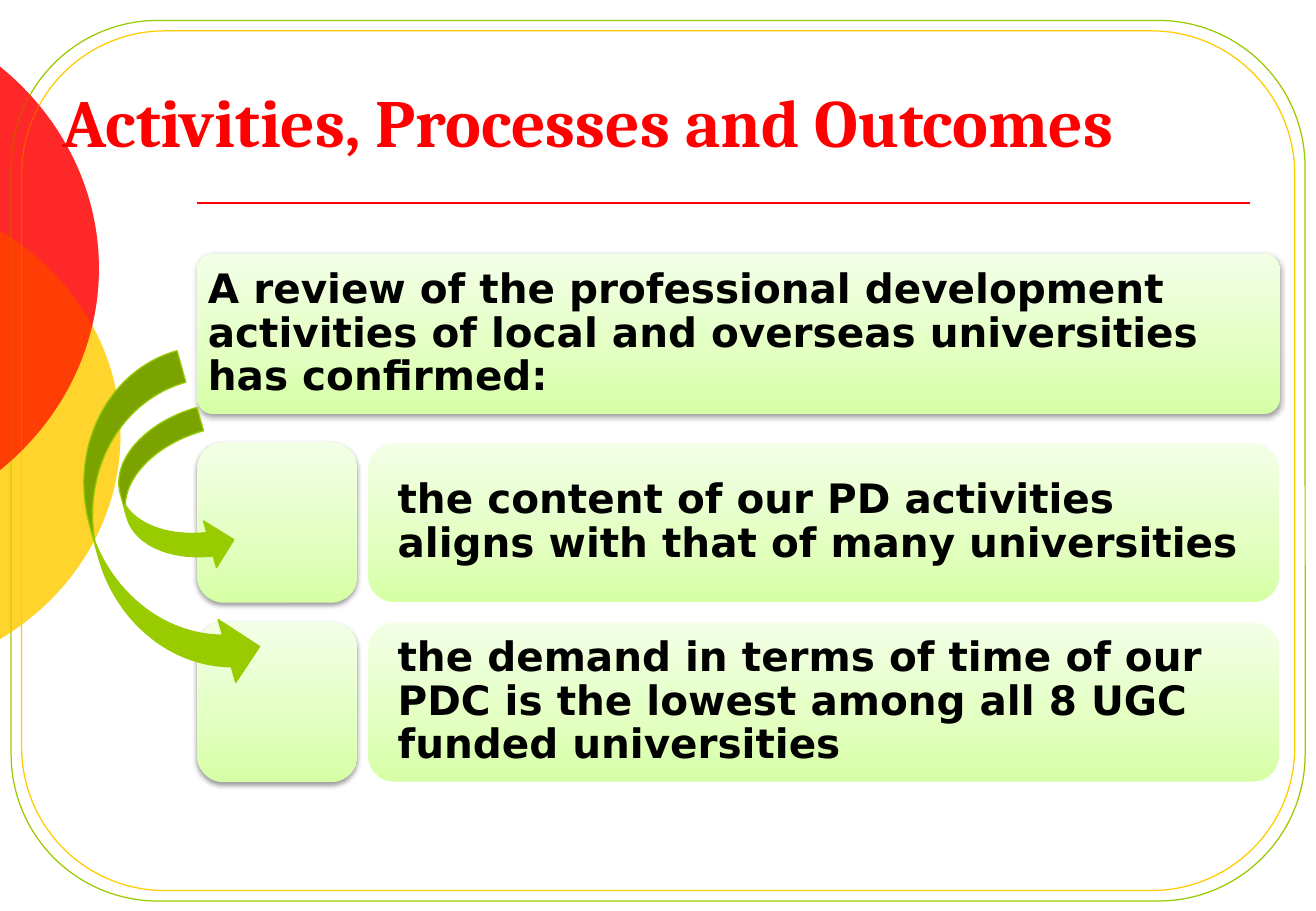
from dataclasses import dataclass
from math import acos, cos, sin, tan

from lxml.etree import SubElement
from pptx import Presentation
from pptx.dml.color import RGBColor as RGB
from pptx.enum.shapes import MSO_CONNECTOR as Connector, MSO_SHAPE as Shape
from pptx.enum.text import MSO_ANCHOR as Anchor, PP_ALIGN as Align
from pptx.oxml.ns import qn
from pptx.util import Pt


@dataclass(frozen=True)
class Theme:
    red: str = "FF0000"
    yellow: str = "FFCC00"
    green: str = "99CC00"
    white: str = "FFFFFF"
    black: str = "000000"
    card_stops: tuple = ((0, "D6FFA5"), (35, "E2FFBF"), (100, "F3FFE7"))
    title_font: str = "Cambria"
    body_font: str = "DejaVu Sans"
    title_size: int = 40
    body_size: int = 24
    hairline: float = 0.75


T = Theme()
REVIEW = ("A review of the professional development activities of local "
          "and overseas universities has confirmed:")
FINDINGS = (
    "the content of our PD activities aligns with that of many universities",
    "the demand in terms of time of our PDC is the lowest among all 8 UGC funded universities",
)


def add_color(parent, color, alpha=100):
    clr = SubElement(parent, qn("a:srgbClr"), val=color)
    SubElement(clr, qn("a:alpha"), val=str(alpha * 1000))


def set_line(shape, color=None, width=T.hairline):
    if color is None:
        shape.line.fill.background()
    else:
        shape.line.color.rgb = RGB.from_string(color)
        shape.line.width = Pt(width)


def set_fill(shape, color):
    shape.fill.solid()
    shape.fill.fore_color.rgb = RGB.from_string(color)


def add_preset(s, kind, box, line=None):
    shape = s.shapes.add_shape(kind, *map(Pt, box))
    shape.shadow.inherit = False
    set_line(shape, line)
    return shape


def place(shape, box):
    shape.left, shape.top, shape.width, shape.height = map(Pt, box)


def write_text(tf, text, font, size, color):
    p = tf.paragraphs[0]
    p.alignment = Align.LEFT
    r = p.add_run()
    r.text = text
    r.font.name = font
    r.font.size = Pt(size)
    r.font.bold = True
    r.font.color.rgb = RGB.from_string(color)
    return p


def add_edge_disc(s, box, color, alpha):
    """Draw the part of an ellipse that lies right of the slide's left edge."""
    left, top, width, height = box
    rx, ry = width / 2, height / 2
    angle = acos(1 + left / rx) if left > 0 else acos(-(left + rx) / rx)
    k = 4 / 3 * tan(angle / 4)
    x, y = rx * (1 + cos(angle)), ry * sin(angle)
    handle_x, handle_y = x + k * rx * sin(angle), y - k * ry * cos(angle)
    upper = ((handle_x, ry - handle_y), (width, ry - k * ry), (width, ry))
    lower = ((width, ry + k * ry), (handle_x, ry + handle_y), (x, ry + y))

    outline = s.shapes.build_freeform(0, 0)
    outline.add_line_segments([(Pt(width), Pt(height))], close=True)
    disc = outline.convert_to_shape()
    place(disc, box)
    disc.shadow.inherit = False
    set_line(disc)
    set_fill(disc, color)
    clr = disc._element.spPr.find(qn("a:solidFill"))[0]
    SubElement(clr, qn("a:alpha"), val=str(alpha * 1000))

    curve = next(disc._element.iter(qn("a:path")))
    for segment in list(curve):
        curve.remove(segment)
    for tag, points in (("a:moveTo", ((x, ry - y),)),
                        ("a:cubicBezTo", upper), ("a:cubicBezTo", lower)):
        segment = SubElement(curve, qn(tag))
        for px, py in points:
            SubElement(segment, qn("a:pt"), x=str(Pt(px)), y=str(Pt(py)))
    SubElement(curve, qn("a:close"))


def add_discs(s):
    add_edge_disc(s, (-240.4, 113.8, 311.8, 288), T.yellow, 58)
    add_edge_disc(s, (-285.6, 0, 344.2, 318.2), T.red, 60)


def add_frame(s, box):
    left, top, width, height = box
    for inset, color in ((0, T.green), (6.2, T.yellow)):
        ring = (left + inset, top + inset, width - 2 * inset, height - 2 * inset)
        add_preset(s, Shape.ROUNDED_RECTANGLE, ring, color).fill.background()


def add_rule(s, left, right, y):
    rule = s.shapes.add_connector(Connector.STRAIGHT, Pt(left), Pt(y), Pt(right), Pt(y))
    set_line(rule, T.red, 1)
    SubElement(rule._element.spPr, qn("a:effectLst"))


def add_title(s, box):
    title = s.shapes.title
    s.shapes._spTree.append(title._element)  # in front of the discs
    place(title, box)
    tf = title.text_frame
    tf.vertical_anchor = Anchor.BOTTOM
    write_text(tf, "Activities, Processes and Outcomes", T.title_font, T.title_size, T.red)


def add_card(s, box, corner=0.167, line=None, shadow=False, text=None, insets=(0, 0)):
    card = add_preset(s, Shape.ROUNDED_RECTANGLE, box, line)
    card.adjustments[0] = corner
    card.fill.gradient()
    card.fill.gradient_angle = 90
    stops = card._element.spPr.find(qn("a:gradFill")).find(qn("a:gsLst"))
    for stop in list(stops):
        stops.remove(stop)
    for pos, color in T.card_stops:
        add_color(SubElement(stops, qn("a:gs"), pos=str(pos * 1000)), color)
    if shadow:
        effects = card._element.spPr.find(qn("a:effectLst"))
        outer = SubElement(effects, qn("a:outerShdw"), blurRad=str(Pt(3.1)),
                           dist=str(Pt(1.6)), dir="5400000", rotWithShape="0")
        add_color(outer, T.black, 38)
    if text:
        tf = card.text_frame
        tf.word_wrap = True
        tf.vertical_anchor = Anchor.MIDDLE
        tf.margin_left = tf.margin_right = Pt(insets[0])
        tf.margin_top = tf.margin_bottom = Pt(insets[1])
        p = write_text(tf, text, T.body_font, T.body_size, T.black)
        p.line_spacing = 0.9


def add_findings(s, box):
    """Stack the review card and, below it, one tile and card per finding."""
    left, top, width, row = box
    first, pitch, indent = 111.8, 106.4, 100.8
    add_card(s, box, corner=0.1, shadow=True, text=REVIEW, insets=(3.6, 2))
    for i, finding in enumerate(FINDINGS):
        y = top + first + i * pitch
        add_card(s, (left, y, row, row), shadow=True)
        add_card(s, (left + indent, y, width - indent, row), line=T.white,
                 text=finding, insets=(13.4, 13.4))


def add_arrows(s):
    for box in ((54, 266.6, 95.8, 57.6), (-6.2, 276.5, 201.6, 77.8)):
        arrow = add_preset(s, Shape.CURVED_UP_ARROW, box, T.green)
        arrow.rotation = 74.4
        set_fill(arrow, T.green)


def build_slide(prs):
    s = prs.slides.add_slide(prs.slide_layouts[5])
    add_discs(s)
    add_frame(s, (6.6, 12.1, 767, 522))
    add_rule(s, 116.9, 741, 120.3)
    add_discs(s)  # a second layer tints the frame and deepens the colour
    add_title(s, (30, 24, 750, 75))
    add_findings(s, (116.9, 150.5, 641.7, 95))
    add_arrows(s)


def main():
    prs = Presentation()
    prs.slide_width, prs.slide_height = Pt(780), Pt(540)
    build_slide(prs)
    prs.save("out.pptx")


if __name__ == "__main__":
    main()
